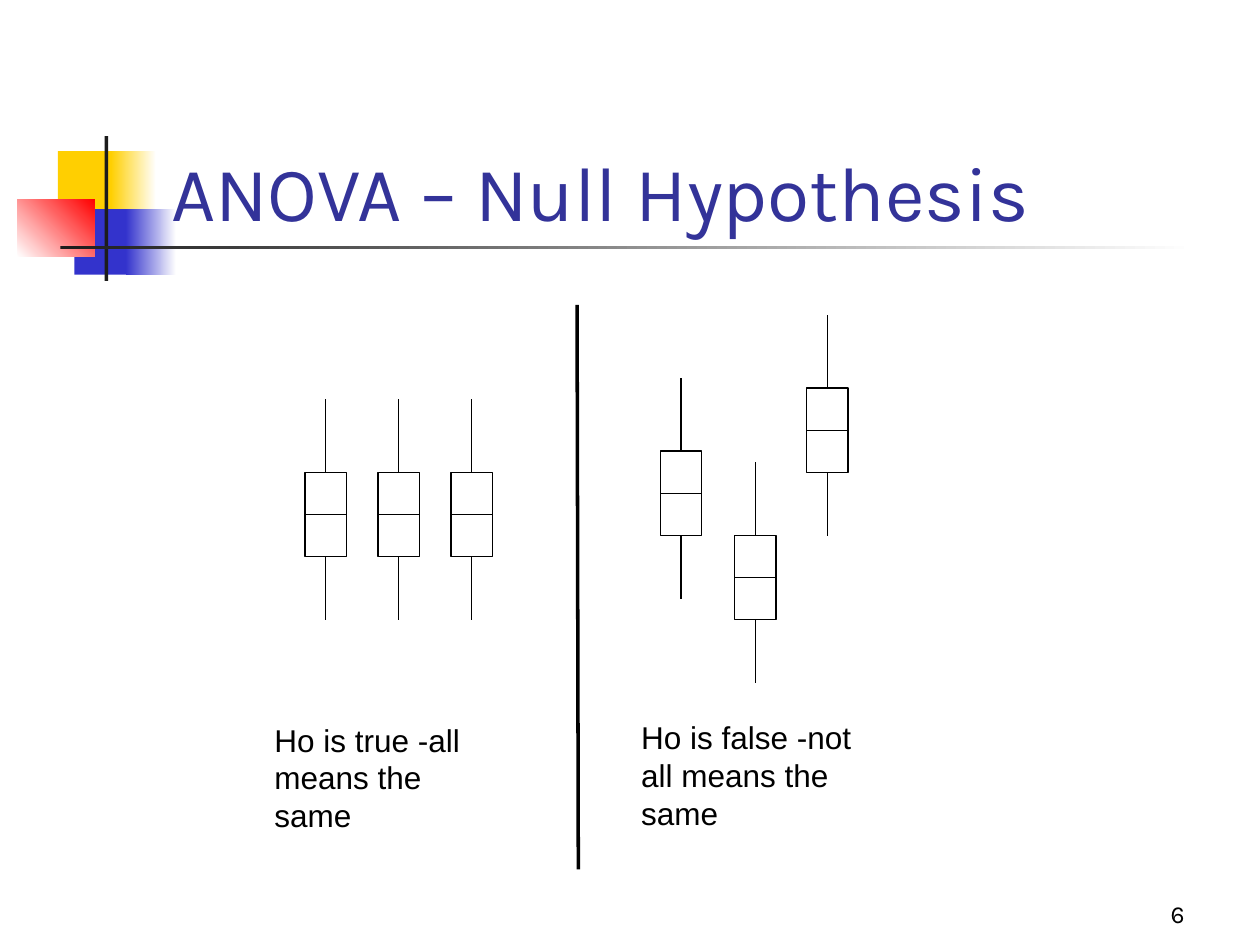
from dataclasses import dataclass

from lxml import etree
from pptx import Presentation
from pptx.dml.color import RGBColor
from pptx.enum.shapes import MSO_CONNECTOR as CONN, MSO_SHAPE as SHAPE
from pptx.enum.text import MSO_ANCHOR as ANCHOR, PP_ALIGN as ALIGN
from pptx.oxml.ns import qn
from pptx.util import Inches, Pt

BLACK, WHITE = "000000", "FFFFFF"
YELLOW, BLUE, RED, DARK = "FFCF01", "3333CC", "FF0000", "1C1C1C"
BOX_W, BOX_H = 0.33, 0.67
UPPER, LOWER = 0.58, 0.5  # whisker lengths
TOP, LEFT, BOTTOM, RIGHT = range(4)  # connection sites


@dataclass
class Block:
    x: float
    y: float
    w: float
    h: float
    color: str
    fade_to: str = ""
    angle: float = 0


@dataclass
class BoxPlot:
    x: float
    y: float


@dataclass
class Label:
    x: float
    y: float
    w: float
    h: float
    text: str
    size: float
    font: str = "Arial"
    color: str = BLACK
    anchor: ANCHOR = ANCHOR.TOP
    align: ALIGN = ALIGN.LEFT


BLOCKS = [
    Block(0.46, 1.2, 0.48, 0.52, YELLOW),
    Block(0.88, 1.2, 0.36, 0.52, YELLOW, WHITE),
    Block(0.59, 1.66, 0.46, 0.52, BLUE),
    Block(1, 1.66, 0.4, 0.52, BLUE, WHITE),
    Block(0.14, 1.58, 0.61, 0.46, WHITE, RED, 45),
    Block(0.83, 1.08, 0.03, 1.15, DARK),
    Block(0.48, 1.95, 9, 0.03, DARK, WHITE),
]
EQUAL_MEANS = [BoxPlot(2.42 + 0.58 * i, 3.75) for i in range(3)]
UNEQUAL_MEANS = [BoxPlot(5.24, 3.58), BoxPlot(5.83, 4.25), BoxPlot(6.4, 3.08)]
LABELS = [
    Label(1.26, 0.68, 8.52, 1.25, "ANOVA – Null Hypothesis", 44, "Karla",
          "333399", ANCHOR.BOTTOM),
    Label(2.08, 5.67, 1.83, 0.58, "Ho is true -all means the same", 18),
    Label(4.99, 5.65, 1.93, 0.68, "Ho is false -not all means the same", 18),
    Label(7.42, 6.92, 2.08, 0.5, "6", 14, "Karla", BLACK,
          ANCHOR.BOTTOM, ALIGN.RIGHT),
]


def rgb(color: str) -> RGBColor:
    return RGBColor.from_string(color)


def add_rect(s, x: float, y: float, w: float, h: float):
    sp = s.shapes.add_shape(SHAPE.RECTANGLE, Inches(x), Inches(y), Inches(w), Inches(h))
    sp.shadow.inherit = False
    return sp


def add_block(s, b: Block) -> None:
    sp = add_rect(s, b.x, b.y, b.w, b.h)
    sp.line.fill.background()
    if b.fade_to:
        sp.fill.gradient()
        sp.fill.gradient_angle = b.angle
        for stop, color in zip(sp.fill.gradient_stops, (b.color, b.fade_to)):
            stop.color.rgb = rgb(color)
    else:
        sp.fill.solid()
        sp.fill.fore_color.rgb = rgb(b.color)


def add_line(s, x1: float, y1: float, x2: float, y2: float, width: float = 0.75):
    line = s.shapes.add_connector(CONN.STRAIGHT, Inches(x1), Inches(y1),
                                  Inches(x2), Inches(y2))
    line.line.color.rgb = rgb(BLACK)
    line.line.width = Pt(width)
    etree.SubElement(line._element.spPr, qn("a:effectLst"))
    return line


def add_box_plot(s, b: BoxPlot) -> None:
    sp = add_rect(s, b.x, b.y, BOX_W, BOX_H)
    sp.fill.solid()
    sp.fill.fore_color.rgb = rgb(WHITE)
    sp.line.color.rgb = rgb(BLACK)
    sp.line.width = Pt(0.75)

    mid_x, mid_y, bottom = b.x + BOX_W / 2, b.y + BOX_H / 2, b.y + BOX_H
    add_line(s, mid_x, b.y - UPPER, mid_x, b.y).end_connect(sp, TOP)
    add_line(s, mid_x, bottom + LOWER, mid_x, bottom).end_connect(sp, BOTTOM)
    median = add_line(s, b.x, mid_y, b.x + BOX_W, mid_y)
    median.begin_connect(sp, LEFT)
    median.end_connect(sp, RIGHT)


def add_label(s, label: Label) -> None:
    sp = s.shapes.add_textbox(Inches(label.x), Inches(label.y),
                              Inches(label.w), Inches(label.h))
    tf = sp.text_frame
    tf.word_wrap = True
    tf.vertical_anchor = label.anchor
    p = tf.paragraphs[0]
    p.alignment = label.align
    r = p.add_run()
    r.text = label.text
    r.font.size = Pt(label.size)
    r.font.name = label.font
    r.font.color.rgb = rgb(label.color)


def main() -> None:
    prs = Presentation()
    prs.slide_width, prs.slide_height = Inches(10), Inches(7.5)
    s = prs.slides.add_slide(prs.slide_layouts[6])

    # Title decoration
    for block in BLOCKS:
        add_block(s, block)

    # Box plots on both sides of the divider
    for plot in EQUAL_MEANS + UNEQUAL_MEANS:
        add_box_plot(s, plot)
    add_line(s, 4.58, 2.42, 4.59, 6.9, 2)

    # Title, captions and slide number
    for label in LABELS:
        add_label(s, label)

    prs.save("out.pptx")


if __name__ == "__main__":
    main()
